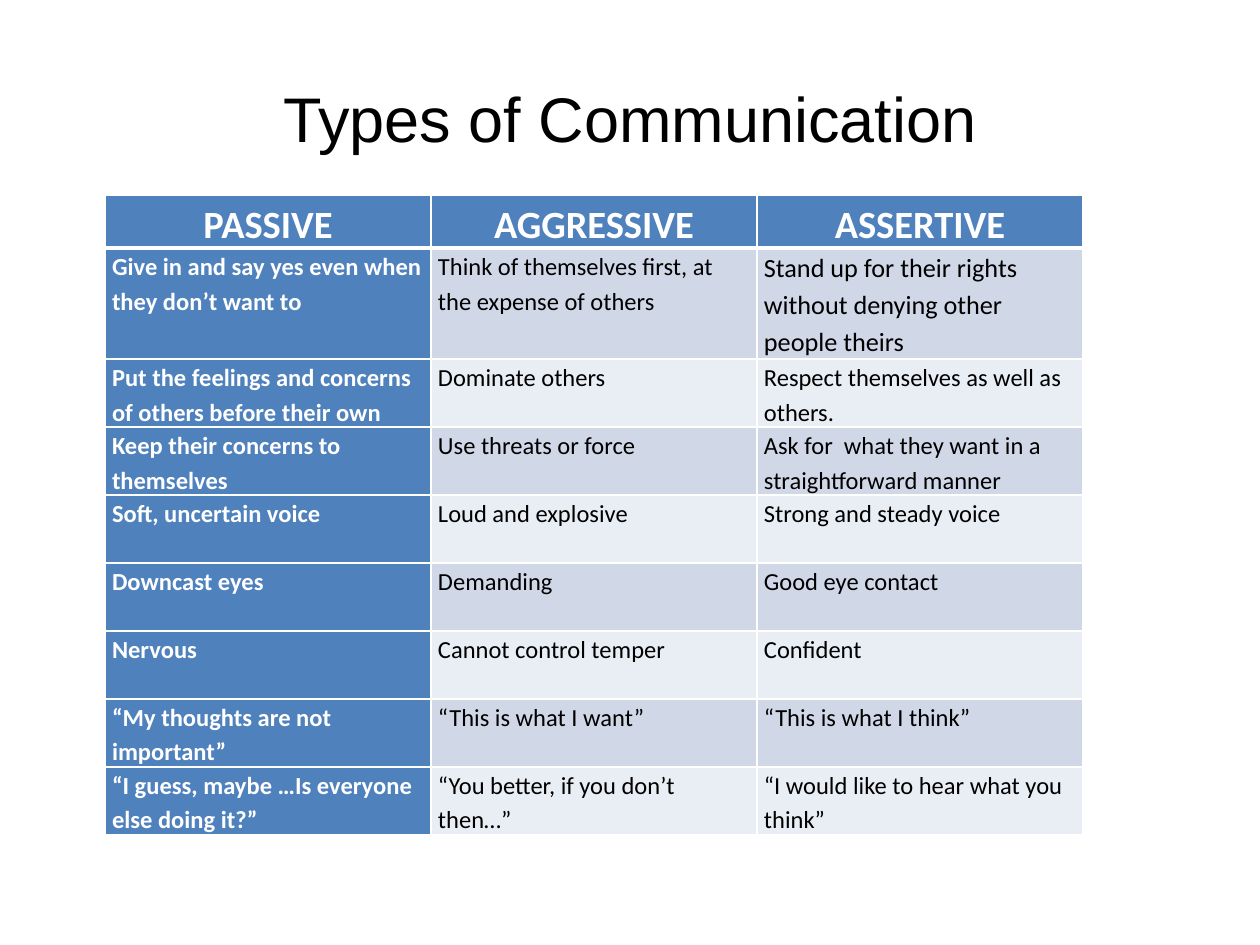
import pptx
import pptx.dml.color
import pptx.enum.text
import pptx.oxml
import pptx.oxml.ns
import pptx.util

PX = 914400 / 126
WHITE, BLACK, BLUE = "FFFFFF", "000000", "4F81BD"
BANDS = ["D0D8E8", "E9EDF4"]
HEADER_HEIGHT, FIRST_HEIGHT, ROW_HEIGHT, COLUMN_WIDTH = 53, 111, 68, 326

ROWS = [
    ("PASSIVE", "AGGRESSIVE", "ASSERTIVE"),
    ("Give in and say yes even when they don’t want to",
     "Think of themselves first, at the expense of others",
     "Stand up for their rights without denying other people theirs"),
    ("Put the feelings and concerns of others before their own",
     "Dominate others", "Respect themselves as well as others."),
    ("Keep their concerns to themselves", "Use threats or force",
     "Ask for  what they want in a straightforward manner"),
    ("Soft, uncertain voice", "Loud and explosive", "Strong and steady voice"),
    ("Downcast eyes", "Demanding", "Good eye contact"),
    ("Nervous", "Cannot control temper", "Confident"),
    ("“My thoughts are not important”", "“This is what I want”",
     "“This is what I think”"),
    ("“I guess, maybe …Is everyone else doing it?”",
     "“You better, if you don’t then…”",
     "“I would like to hear what you think”"),
]


def px(*lengths):
    return [pptx.util.Emu(round(length * PX)) for length in lengths]


def write(frame, text, font, size, color, bold, align):
    frame.text = text
    paragraph = frame.paragraphs[0]
    paragraph.alignment = align
    span = paragraph.runs[0]
    span.font.name = font
    span.font.size = pptx.util.Pt(size)
    span.font.bold = bold
    span.font.color.rgb = pptx.dml.color.RGBColor.from_string(color)


LEFT = pptx.enum.text.PP_ALIGN.LEFT
CENTER = pptx.enum.text.PP_ALIGN.CENTER

deck = pptx.Presentation()
deck.slide_width, deck.slide_height = px(1260, 945)
page = deck.slides.add_slide(deck.slide_layouts[6])

title = page.shapes.add_textbox(*px(63, 38, 1134, 158)).text_frame
title.word_wrap = True
title.vertical_anchor = pptx.enum.text.MSO_ANCHOR.MIDDLE
write(title, "Types of Communication", "Arial", 36, BLACK, False, CENTER)

heights = [HEADER_HEIGHT, FIRST_HEIGHT] + [ROW_HEIGHT] * (len(ROWS) - 2)
table = page.shapes.add_table(
    len(ROWS), 3, *px(105, 195, 3 * COLUMN_WIDTH, sum(heights))).table
for column in table.columns:
    column.width = px(COLUMN_WIDTH)[0]

for row, texts in enumerate(ROWS):
    table.rows[row].height = px(heights[row])[0]
    for column, text in enumerate(texts):
        cell = table.cell(row, column)
        header = row == 0
        strong = header or column == 0
        size = 22 if header else 15 if (row, column) == (1, 2) else 14
        write(cell.text_frame, text, "Calibri", size,
              WHITE if strong else BLACK, strong, CENTER if header else LEFT)
        cell.text_frame.paragraphs[0].line_spacing = 1.15
        cell.margin_left, cell.margin_right = px(7, 7)
        cell.margin_top = cell.margin_bottom = 0
        cell.fill.solid()
        cell.fill.fore_color.rgb = pptx.dml.color.RGBColor.from_string(
            BLUE if strong else BANDS[(row - 1) % 2])
        for order, side in enumerate("LRTB"):
            thick = (row, side) in [(0, "B"), (1, "T")]
            border = pptx.oxml.parse_xml(
                f'<a:ln{side} {pptx.oxml.ns.nsdecls("a")} w="{pptx.util.Pt(3 if thick else 1)}">'
                f'<a:solidFill><a:srgbClr val="{WHITE}"/></a:solidFill></a:ln{side}>')
            cell._tc.get_or_add_tcPr().insert(order, border)

deck.save("out.pptx")
